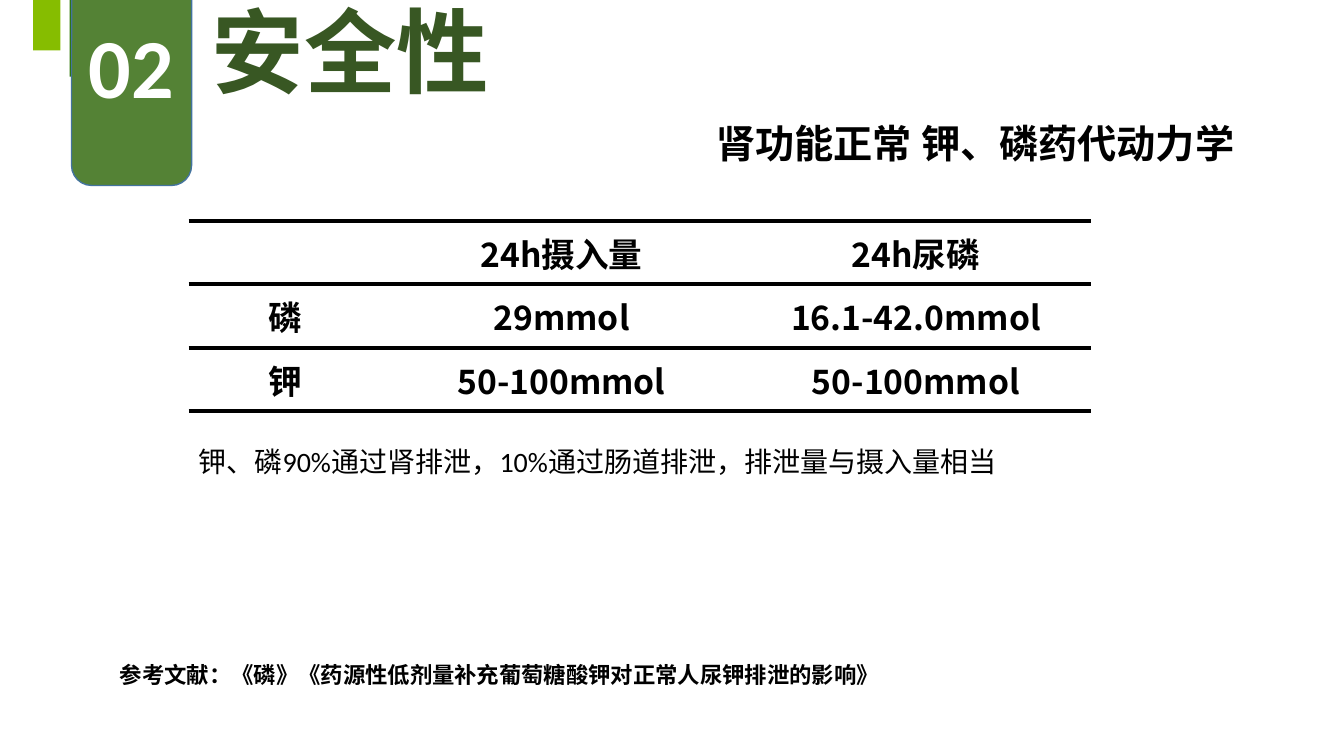
import pptx
import pptx.util
import pptx.dml.color
import pptx.enum.shapes
import pptx.enum.text
import pptx.oxml
import pptx.oxml.ns
import lxml.etree

RGB = pptx.dml.color.RGBColor
BLACK = RGB(0, 0, 0)
WHITE = RGB(0xFF, 0xFF, 0xFF)
DEEP = RGB(0x2C, 0x77, 0x00)
LIME = RGB(0x86, 0xBD, 0x00)
GREEN = RGB(0x54, 0x82, 0x35)
BLUE = RGB(0x43, 0x73, 0x9E)
DARK = RGB(0x38, 0x57, 0x23)

SANS = "Noto Sans CJK SC"
LATIN = "Calibri"
ALIGN = pptx.enum.text.PP_ALIGN
MIDDLE = pptx.enum.text.MSO_ANCHOR.MIDDLE
SHAPE = pptx.enum.shapes.MSO_SHAPE
NONE = "{2D5ABB26-0587-4C30-8999-92F81FD0307C}"
RULE = 3

HEAD = ["", "24h摄入量", "24h尿磷"]
ROWS = [
    HEAD,
    ["磷", "29mmol", "16.1-42.0mmol"],
    ["钾", "50-100mmol", "50-100mmol"],
]
COLS = [1.92, 3.56, 3.47]


def inches(box):
    return [pptx.util.Inches(n) for n in box]


def write(frame, text, size=24, font=SANS, color=BLACK, bold=True, align=ALIGN.LEFT):
    para = frame.paragraphs[0]
    para.alignment = align
    run = para.add_run()
    run.text = text
    run.font.size = pptx.util.Pt(size)
    run.font.name = font
    run.font.bold = bold
    run.font.color.rgb = color
    east = lxml.etree.SubElement(run.font._element, pptx.oxml.ns.qn("a:ea"))
    east.set("typeface", SANS)


def label(slide, box, text, wrap=True, anchor=None, **form):
    frame = slide.shapes.add_textbox(*inches(box)).text_frame
    frame.word_wrap = wrap
    frame.vertical_anchor = anchor
    write(frame, text, **form)


def block(slide, kind, box, fill, line=None):
    shape = slide.shapes.add_shape(kind, *inches(box))
    shape.shadow.inherit = False
    shape.fill.solid()
    shape.fill.fore_color.rgb = fill
    if line is None:
        shape.line.fill.background()
    else:
        shape.line.color.rgb = line
        shape.line.width = pptx.util.Pt(1)
    return shape


def header(slide, left, width):
    """Green tabs, section number, section name and the topic at the right."""
    block(slide, SHAPE.RECTANGLE, (left + 0.36, 0, 0.27, 0.76), DEEP)
    block(slide, SHAPE.RECTANGLE, (left, 0, 0.27, 0.5), LIME)
    badge = block(slide, SHAPE.FLOWCHART_ALTERNATE_PROCESS,
                  (left + 0.38, -0.56, 1.19, 2.4), GREEN, BLUE)
    badge.text_frame.vertical_anchor = MIDDLE
    write(badge.text_frame, "02", size=60, font=LATIN, color=WHITE, align=ALIGN.CENTER)
    label(slide, (left + 1.67, -0.11, 2.95, 1.21), "安全性", wrap=False,
          size=66, color=DARK, align=ALIGN.CENTER)
    label(slide, (left + width - 9, 1.1, 9, 0.63), "肾功能正常 钾、磷药代动力学",
          anchor=MIDDLE, size=28, font=LATIN, align=ALIGN.RIGHT)


def rule(cell):
    """Draw the lines above and below a cell."""
    props = cell._tc.get_or_add_tcPr()
    for side in ("lnT", "lnB"):
        props.append(pptx.oxml.parse_xml(
            f'<a:{side} {pptx.oxml.ns.nsdecls("a")} w="{pptx.util.Pt(RULE)}">'
            f'<a:solidFill><a:srgbClr val="{BLACK}"/></a:solidFill></a:{side}>'))


def doses(slide, left, top, step):
    """Intake and excretion table with the finding under it."""
    high = step * len(ROWS)
    box = inches((left, top, sum(COLS), high))
    table = slide.shapes.add_table(len(ROWS), len(COLS), *box).table
    table.first_row = table.horz_banding = False
    table._tbl.tblPr.find(pptx.oxml.ns.qn("a:tableStyleId")).text = NONE
    for col, wide in zip(table.columns, COLS):
        col.width = pptx.util.Inches(wide)
    for r, row in enumerate(ROWS):
        for c, text in enumerate(row):
            cell = table.cell(r, c)
            rule(cell)
            cell.fill.background()
            cell.vertical_anchor = MIDDLE
            if text:
                write(cell.text_frame, text, align=ALIGN.CENTER)
    label(slide, (left, top + high + 0.28, 9.1, 0.44),
          "钾、磷90%通过肾排泄，10%通过肠道排泄，排泄量与摄入量相当",
          size=20, font=LATIN, bold=False)


def source(slide, box):
    label(slide, box, "参考文献：《磷》《药源性低剂量补充葡萄糖酸钾对正常人尿钾排泄的影响》", size=16)


def main():
    deck = pptx.Presentation()
    deck.slide_width, deck.slide_height = inches((13.33, 7.5))
    slide = deck.slides.add_slide(deck.slide_layouts[6])
    header(slide, 0.33, 12.01)
    doses(slide, 1.87, 2.19, 0.63)
    source(slide, (1.09, 6.51, 7.88, 0.37))
    deck.save("out.pptx")


if __name__ == "__main__":
    main()
